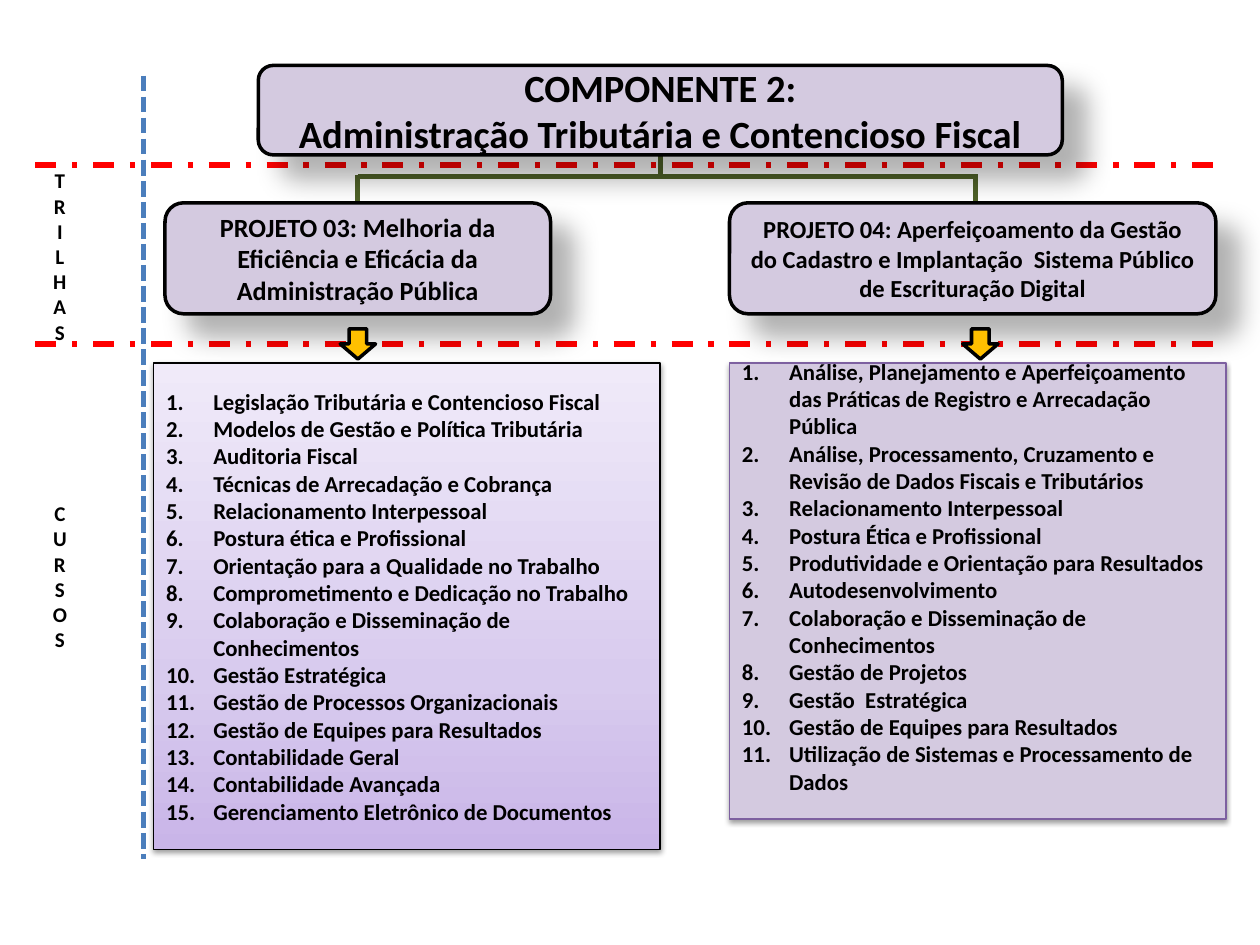
from dataclasses import dataclass

from lxml import etree
from pptx import Presentation
from pptx.dml.color import RGBColor
from pptx.enum import dml, shapes, text
from pptx.oxml import parse_xml
from pptx.oxml.ns import nsdecls, qn
from pptx.util import Pt


@dataclass(frozen=True)
class Theme:
    font: str = "Calibri"
    ink: str = "000000"
    lilac: str = "D4CAE0"
    purple: str = "7D60A0"
    gradient: tuple = ((0, "C9B5E8"), (0.35, "D8CBEE"), (1, "F0EAF9"))
    red: str = "FF0000"
    green: str = "4F6228"
    blue: str = "4B7EBC"
    amber: str = "FFC000"
    title: int = 22
    project_3: int = 15
    project_4: int = 14
    course: int = 13
    label: int = 12
    # opacity in percent, blur, distance, direction in degrees
    deep_shadow: tuple = (30, 15, 18, 45)
    soft_shadow: tuple = (38, 3.1, 1.6, 90)


T = Theme()
MSO = shapes.MSO_SHAPE
DASH = dml.MSO_LINE

prs = Presentation()
prs.slide_width, prs.slide_height = Pt(720), Pt(540)
slide = prs.slides.add_slide(prs.slide_layouts[6])


def add_line(x1, y1, x2, y2, color, dash=None):
    c = slide.shapes.add_connector(shapes.MSO_CONNECTOR.STRAIGHT, Pt(x1), Pt(y1), Pt(x2), Pt(y2))
    c.line.color.rgb = RGBColor.from_string(color)
    c.line.width = Pt(3)
    if dash:
        c.line.dash_style = dash
    etree.SubElement(c._element.spPr, qn("a:effectLst"))


def add_box(content, at, *, kind=None, size=T.label, fill=T.lilac, line=T.ink, width=2,
            shadow=None, numbered=False, bottom=3.6):
    """Draw a shape, or a plain text box without a kind; each line of content is a paragraph."""
    place = [Pt(v) for v in at]
    if kind is None:
        s = slide.shapes.add_textbox(*place)
    else:
        s = slide.shapes.add_shape(kind, *place)
        s.shadow.inherit = False
        s.line.color.rgb = RGBColor.from_string(line)
        s.line.width = Pt(width)
        if isinstance(fill, str):
            s.fill.solid()
            s.fill.fore_color.rgb = RGBColor.from_string(fill)
        else:
            s.fill.gradient()
            s.fill.gradient_angle = 90
            stops = s._element.spPr.find(qn("a:gradFill")).find(qn("a:gsLst"))
            stops.clear()
            for pos, color in fill:
                stops.append(parse_xml(
                    f'<a:gs {nsdecls("a")} pos="{round(pos * 100000)}">'
                    f'<a:srgbClr val="{color}"/></a:gs>'))
    if shadow:
        alpha, blur, dist, angle = shadow
        s._element.spPr.find(qn("a:effectLst")).append(parse_xml(
            f'<a:outerShdw {nsdecls("a")} blurRad="{Pt(blur)}" dist="{Pt(dist)}" '
            f'dir="{angle * 60000}" algn="tl" rotWithShape="0"><a:srgbClr val="{T.ink}">'
            f'<a:alpha val="{alpha * 1000}"/></a:srgbClr></a:outerShdw>'))
    if not content:
        return

    tf = s.text_frame
    tf.word_wrap = True
    tf.vertical_anchor = text.MSO_ANCHOR.MIDDLE
    tf.margin_bottom = Pt(bottom)
    for i, words in enumerate(content.split("\n")):
        p = tf.paragraphs[0] if i == 0 else tf.add_paragraph()
        p.alignment = text.PP_ALIGN.LEFT if numbered else text.PP_ALIGN.CENTER
        if numbered:
            pPr = p._p.get_or_add_pPr()
            pPr.set("marL", str(Pt(27)))
            pPr.set("indent", str(Pt(-27)))
            etree.SubElement(pPr, qn("a:buFont"), typeface="+mj-lt")
            etree.SubElement(pPr, qn("a:buAutoNum"), type="arabicPeriod")
        r = p.add_run()
        r.text = words
        r.font.name, r.font.size, r.font.bold = T.font, Pt(size), True
        r.font.color.rgb = RGBColor.from_string(T.ink)


# Separators between the bands
for y in (196.6, 94.3):
    add_line(20.2, y, 699.8, y, T.red, DASH.DASH_DOT)

# Tree from the component to its projects
add_line(377.3, 77, 377.3, 100, T.green)
add_line(204.5, 100.8, 558.7, 100.8, T.green)
for x in (557.3, 204.5):
    add_line(x, 100, x, 122.4, T.green)

card = dict(kind=MSO.ROUNDED_RECTANGLE, shadow=T.deep_shadow)
add_box("PROJETO 04: Aperfeiçoamento da Gestão do Cadastro e Implantação  Sistema Público "
        "de Escrituração Digital", (416.9, 115.9, 277.9, 63.4), size=T.project_4, **card)
add_box("PROJETO 03: Melhoria da Eficiência e Eficácia da Administração Pública",
        (94.3, 115.9, 220.3, 63.4), size=T.project_3, **card)
add_box("COMPONENTE 2:\nAdministração Tributária e Contencioso Fiscal",
        (147.6, 37.4, 459.4, 51.1), size=T.title, **card)

add_line(82.1, 43.2, 82.1, 491, T.blue, DASH.SQUARE_DOT)

# Vertical band labels, one letter a line
for word, top, height in (("TRILHAS", 105.1, 97.2), ("CURSOS", 285.1, 103)):
    add_box("\n".join(word), (14.4, top, 39.6, height), bottom=18.2)

# Course lists
courses_3 = """Legislação Tributária e Contencioso Fiscal
Modelos de Gestão e Política Tributária
Auditoria Fiscal
Técnicas de Arrecadação e Cobrança
Relacionamento Interpessoal
Postura ética e Profissional
Orientação para a Qualidade no Trabalho
Comprometimento e Dedicação no Trabalho
Colaboração e Disseminação de Conhecimentos
Gestão Estratégica
Gestão de Processos Organizacionais
Gestão de Equipes para Resultados
Contabilidade Geral
Contabilidade Avançada
Gerenciamento Eletrônico de Documentos"""
courses_4 = """Análise, Planejamento e Aperfeiçoamento das Práticas de Registro e Arrecadação Pública
Análise, Processamento, Cruzamento e Revisão de Dados Fiscais e Tributários
Relacionamento Interpessoal
Postura Ética e Profissional
Produtividade e Orientação para Resultados
Autodesenvolvimento
Colaboração e Disseminação de Conhecimentos
Gestão de Projetos
Gestão  Estratégica
Gestão de Equipes para Resultados
Utilização de Sistemas e Processamento de Dados"""
panel = dict(kind=MSO.RECTANGLE, size=T.course, width=0.75, shadow=T.soft_shadow, numbered=True)
add_box(courses_3, (87.8, 207.4, 289.4, 277.9), fill=T.gradient, **panel)
add_box(courses_4, (416.9, 207.4, 283.7, 260.6), line=T.purple, bottom=20.6, **panel)

# Arrows from projects to courses
for x in (194.4, 550.1):
    add_box("", (x, 187.9, 20.2, 17.3), kind=MSO.DOWN_ARROW, fill=T.amber)

prs.save("out.pptx")
